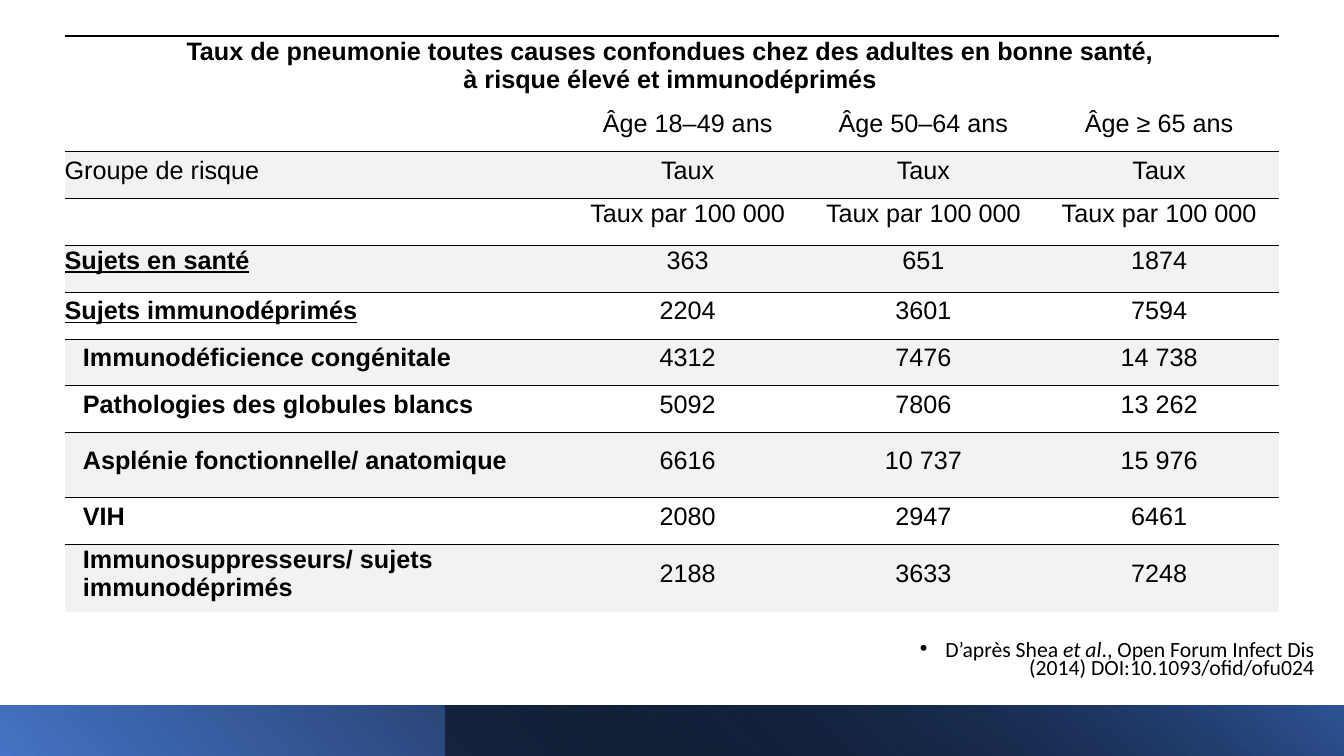
"""Build a slide with a table of pneumonia rates by risk group and age."""
from lxml.etree import SubElement
from pptx import Presentation
from pptx.dml.color import RGBColor
from pptx.enum.shapes import MSO_SHAPE
from pptx.enum.text import MSO_ANCHOR, MSO_AUTO_SIZE, PP_ALIGN
from pptx.oxml import parse_xml
from pptx.oxml.ns import nsdecls, qn
from pptx.util import Cm, Pt

BLACK = RGBColor(0x00, 0x00, 0x00)
GREY = RGBColor(0xF2, 0xF2, 0xF2)
BLUE = RGBColor(0x44, 0x72, 0xC4)
NAVY = RGBColor(0x2F, 0x55, 0x97)

PLAIN = "{2D5ABB26-0587-4C30-8999-92F81FD0307C}"
WIDE, HIGH = Cm(33.87), Cm(19.05)
COLS = [12.77, 5.94, 5.94, 5.94]
ROWS = [1.73] + [1.18] * 7 + [1.64, 1.18, 1.71]
HEAD = ("Taux de pneumonie toutes causes confondues chez des adultes en bonne santé,\n"
        "à risque élevé et immunodéprimés")
CELLS = [
    [HEAD, "", "", ""],
    ["", "Âge 18–49 ans", "Âge 50–64 ans", "Âge ≥ 65 ans"],
    ["Groupe de risque", "Taux", "Taux", "Taux"],
    ["", "Taux par 100 000", "Taux par 100 000", "Taux par 100 000"],
    ["Sujets en santé", "363", "651", "1874"],
    ["Sujets immunodéprimés", "2204", "3601", "7594"],
    ["Immunodéficience congénitale", "4312", "7476", "14 738"],
    ["Pathologies des globules blancs", "5092", "7806", "13 262"],
    ["Asplénie fonctionnelle/ anatomique", "6616", "10 737", "15 976"],
    ["VIH", "2080", "2947", "6461"],
    ["Immunosuppresseurs/ sujets immunodéprimés", "2188", "3633", "7248"],
]
TOTALS = (4, 5)
HIGH_SET = (3, 4)


def write(para, text, size=18, name="Arial", bold=False, italic=False, under=False):
    """Add text to a paragraph, breaking the line at each newline."""
    for index, line in enumerate(text.split("\n")):
        if index:
            para.add_line_break()
        run = para.add_run()
        run.text = line
        font = run.font
        font.size, font.name = Pt(size), name
        font.bold, font.italic, font.underline = bold, italic, under
        font.color.rgb = BLACK


def rule(cell, width):
    """Draw the top border of a cell."""
    cell._tc.get_or_add_tcPr().insert(0, parse_xml(
        f'<a:lnT {nsdecls("a")} w="{Pt(width)}"><a:solidFill>'
        f'<a:srgbClr val="{BLACK}"/></a:solidFill></a:lnT>'))


def fill_cell(cell, text, row, col):
    """Format one cell by its place in the table and write its text."""
    cell.margin_left, cell.margin_right = 0, Cm(0.08)
    cell.margin_top, cell.margin_bottom = Cm(0.03), Cm(0.25)
    cell.vertical_anchor = MSO_ANCHOR.TOP if row in HIGH_SET else MSO_ANCHOR.MIDDLE
    shaded = row > 0 and row % 2 == 0
    if row == 0 or shaded:
        rule(cell, 0.5 if shaded else 2.25)
    if shaded:
        cell.fill.solid()
        cell.fill.fore_color.rgb = GREY
    else:
        cell.fill.background()
    para = cell.text_frame.paragraphs[0]
    label = col == 0 and row > 0
    para.alignment = PP_ALIGN.LEFT if label else PP_ALIGN.CENTER
    if label and row > max(TOTALS):
        para._p.get_or_add_pPr().set("marL", str(Cm(0.46)))
    if text:
        write(para, text, bold=row == 0 or label and row >= min(TOTALS),
              under=label and row in TOTALS)


def add_rates(slide):
    """Add the table of rates."""
    frame = slide.shapes.add_table(len(ROWS), len(COLS), Cm(1.63), Cm(0.91),
                                   Cm(sum(COLS)), Cm(sum(ROWS)))
    table = frame.table
    table.first_row = table.horz_banding = False
    table._tbl.tblPr.find(qn("a:tableStyleId")).text = PLAIN
    for col, width in zip(table.columns, COLS):
        col.width = Cm(width)
    for row, height in zip(table.rows, ROWS):
        row.height = Cm(height)
    for row, texts in enumerate(CELLS):
        for col, text in enumerate(texts):
            fill_cell(table.cell(row, col), text, row, col)
    table.cell(0, 0).merge(table.cell(0, len(COLS) - 1))


def add_bar(slide, left, stops, angle, alpha=100):
    """Add a footer bar that runs to the right edge with a gradient fill."""
    top = Cm(17.78)
    bar = slide.shapes.add_shape(MSO_SHAPE.RECTANGLE, left, top, WIDE - left, HIGH - top)
    bar.shadow.inherit = False
    bar.line.fill.background()
    bar.fill.gradient()
    bar.fill.gradient_angle = angle
    for stop, (place, color) in zip(bar.fill.gradient_stops, stops):
        stop.position, stop.color.rgb = place, color
    if alpha < 100:
        first = bar._element.spPr.find(".//" + qn("a:srgbClr"))
        SubElement(first, qn("a:alpha")).set("val", str(alpha * 1000))


def add_source(slide):
    """Put the citation in the body placeholder."""
    body = slide.placeholders[1]
    body.left, body.top, body.width, body.height = Cm(22.4), Cm(16.08), Cm(10.97), Cm(1.27)
    frame = body.text_frame
    frame.word_wrap, frame.auto_size = True, MSO_AUTO_SIZE.NONE
    frame.vertical_anchor = MSO_ANCHOR.TOP
    para = frame.paragraphs[0]
    props = para._p.get_or_add_pPr()
    props.set("marL", str(Cm(0.64)))
    props.set("indent", str(-Cm(0.64)))
    SubElement(props, qn("a:buFont")).set("typeface", "Arial")
    SubElement(props, qn("a:buChar")).set("char", "•")
    para.alignment, para.line_spacing = PP_ALIGN.RIGHT, 0.7
    para.space_before, para.space_after = Pt(0), Pt(6)
    for text, italic in (("D’après Shea ", False), ("et al", True),
                         ("., Open Forum Infect Dis (2014) DOI:10.1093/ofid/ofu024", False)):
        write(para, text, size=15.5, name="Calibri", italic=italic)


def main():
    """Build and save the slide."""
    deck = Presentation()
    deck.slide_width, deck.slide_height = WIDE, HIGH
    slide = deck.slides.add_slide(deck.slide_layouts[1])
    title = slide.shapes.title._element
    title.getparent().remove(title)
    add_source(slide)
    add_bar(slide, 0, [(0, BLUE), (0.9, BLACK)], 40)
    add_bar(slide, Cm(11.22), [(0, BLACK), (1, NAVY)], 50, alpha=50)
    add_rates(slide)
    deck.save("out.pptx")


if __name__ == "__main__":
    main()
